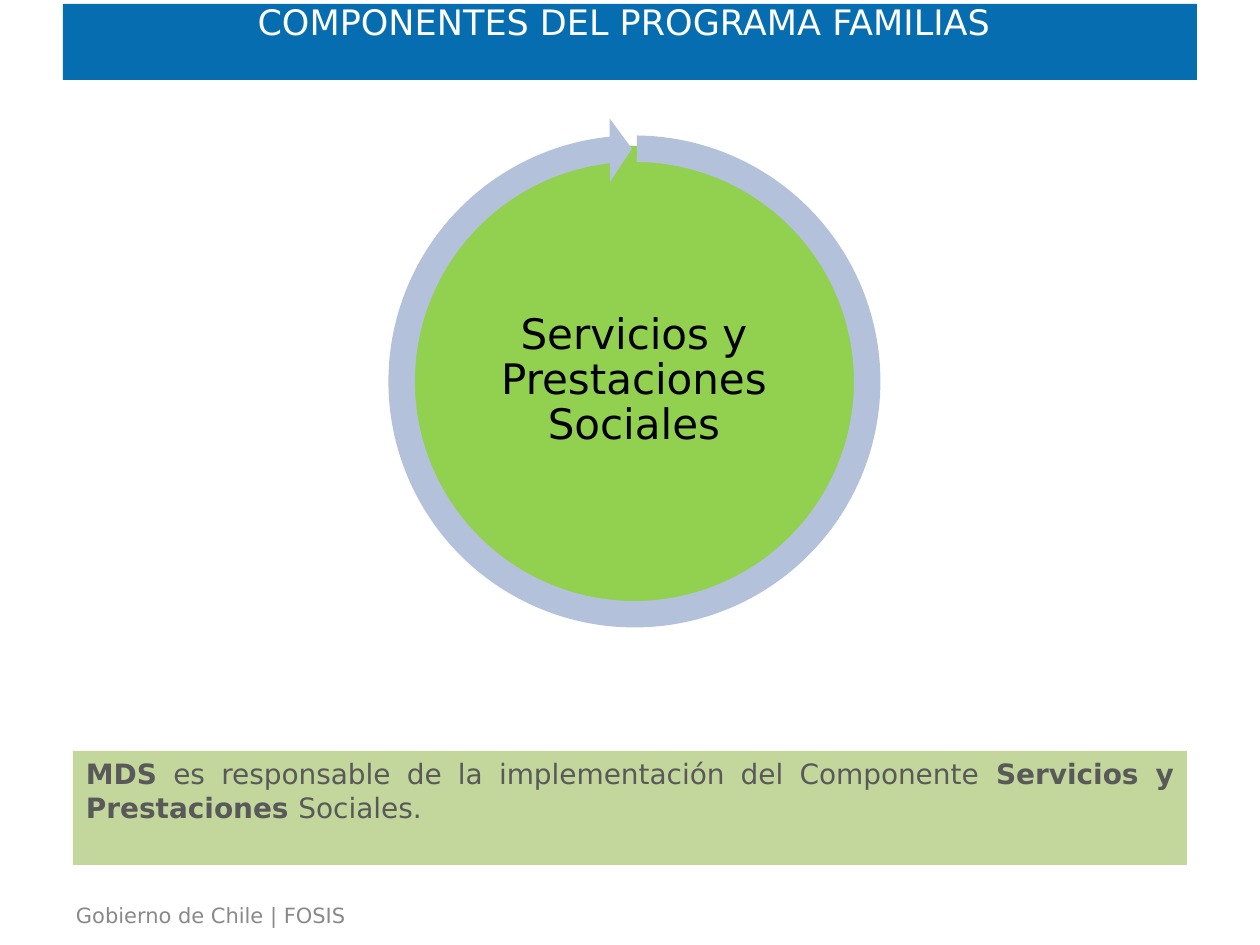
"""Build the slide on the social services component of the Familias programme."""
from pptx import Presentation
from pptx import util as u
from pptx.dml.color import RGBColor
from pptx.enum import shapes, text

PX = 914400 // 126
FONT = "DejaVu Sans"
WHITE = RGBColor(0xFF, 0xFF, 0xFF)
BLACK = RGBColor(0, 0, 0)
BLUE = RGBColor(0x06, 0x6E, 0xB0)
OLIVE = RGBColor(0xC3, 0xD6, 0x9B)
GREEN = RGBColor(0x92, 0xD0, 0x50)
RING = RGBColor(0xB3, 0xC1, 0xDB)
DARK_GREY = RGBColor(0x59, 0x59, 0x59)
GREY = RGBColor(0x89, 0x89, 0x89)

TITLE = [("COMPONENTES DEL PROGRAMA FAMILIAS", False)]
COMPONENT = [("Servicios y Prestaciones Sociales", False)]
RESPONSIBLE = [
    ("MDS", True),
    (" es responsable de la implementación del Componente ", False),
    ("Servicios y Prestaciones ", True),
    ("Sociales.", False),
]
FOOTER = [("Gobierno de Chile | FOSIS", False)]

CENTRE = (634, 381)
DISC, LABEL, ARROW = 470, 314, 529
ARROW_ADJUSTMENTS = (0.05, 3.28, 158.36, 162.36, 0.06)
INSETS = (13, 6, 13, 6)


def centred(size):
    """Return the square of the given size around the diagram centre."""
    return CENTRE[0] - size // 2, CENTRE[1] - size // 2, size, size


def add_filled(page, kind, area, fill):
    """Add a flat preset shape without an outline."""
    shape = page.shapes.add_shape(kind, *(v * PX for v in area))
    shape.shadow.inherit = False
    shape.fill.solid()
    shape.fill.fore_color.rgb = fill
    shape.line.fill.background()
    return shape


def write(box, spans, size, color, align, anchor, insets=INSETS, wrap=True):
    """Write one paragraph of plain and bold spans into a box."""
    frame = box.text_frame
    frame.word_wrap = wrap
    frame.vertical_anchor = anchor
    (frame.margin_left, frame.margin_top,
     frame.margin_right, frame.margin_bottom) = (v * PX for v in insets)
    para = frame.paragraphs[0]
    para.alignment = align
    para.font.name = FONT
    para.font.size = u.Pt(size)
    para.font.color.rgb = color
    for words, bold in spans:
        span = para.add_run()
        span.text = words
        if bold:
            span.font.bold = True
    return para


def main():
    """Compose the slide and save it."""
    deck = Presentation()
    deck.slide_width, deck.slide_height = u.Inches(10), u.Inches(7.5)
    page = deck.slides.add_slide(deck.slide_layouts[6])
    kinds, align, anchor = shapes.MSO_SHAPE, text.PP_ALIGN, text.MSO_ANCHOR

    footer = page.shapes.add_textbox(*(v * PX for v in (63, 897, 306, 38)))
    write(footer, FOOTER, 12, GREY, align.LEFT, anchor.TOP, wrap=False)

    banner = add_filled(page, kinds.RECTANGLE, (63, 4, 1134, 76), BLUE)
    write(banner, TITLE, 20, WHITE, align.CENTER, anchor.MIDDLE, (13, 0, 25, 41))

    note = add_filled(page, kinds.RECTANGLE, (73, 751, 1114, 114), OLIVE)
    write(note, RESPONSIBLE, 16, DARK_GREY, align.JUSTIFY, anchor.TOP)

    add_filled(page, kinds.OVAL, centred(DISC), GREEN)
    label = page.shapes.add_textbox(*(v * PX for v in centred(LABEL)))
    para = write(label, COMPONENT, 24, BLACK, align.CENTER, anchor.MIDDLE, (4,) * 4)
    para.line_spacing = 0.9

    arrow = add_filled(page, kinds.CIRCULAR_ARROW, centred(ARROW), RING)
    for index, value in enumerate(ARROW_ADJUSTMENTS):
        arrow.adjustments[index] = value

    deck.save("out.pptx")


if __name__ == "__main__":
    main()
